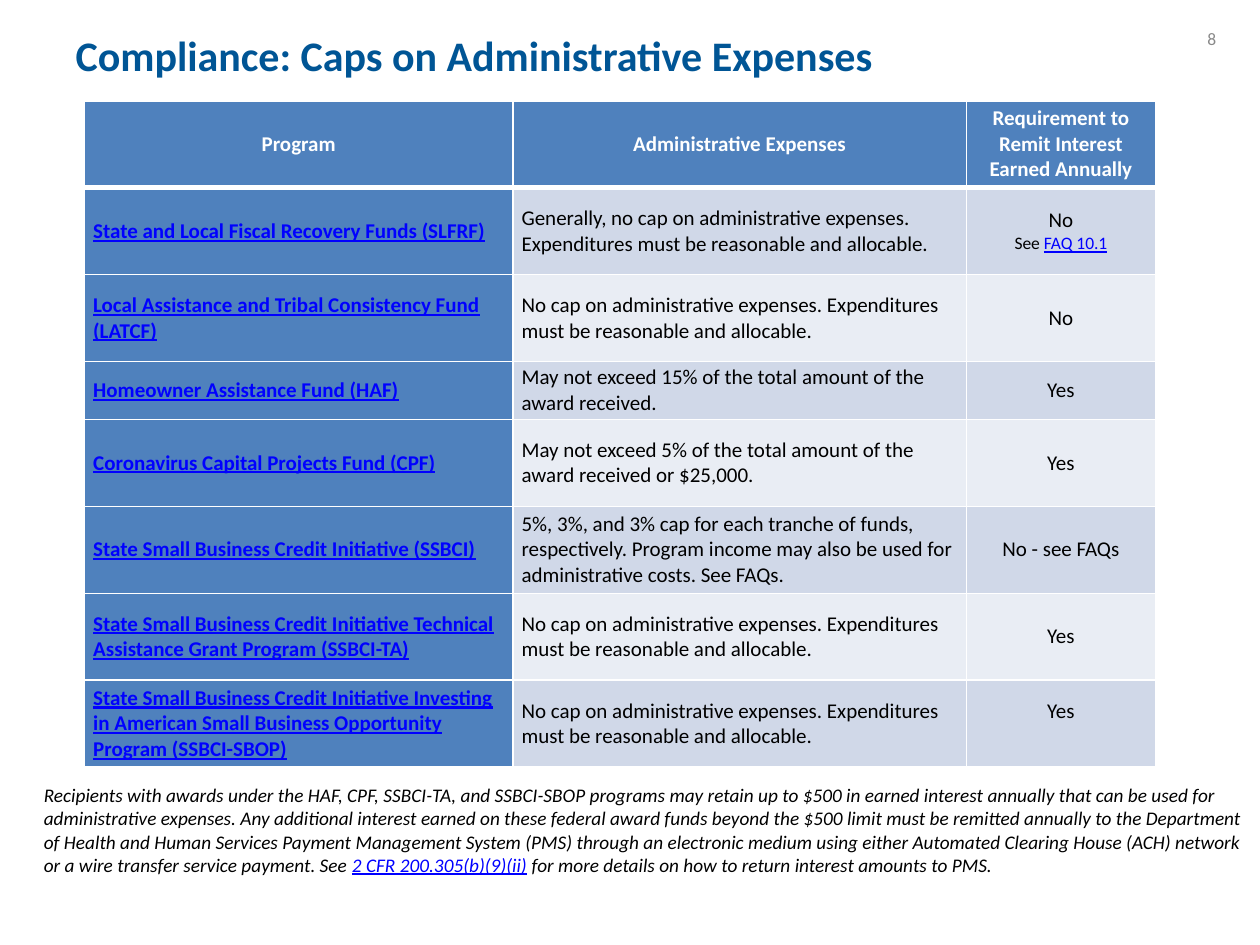
"""Build the slide on caps on administrative expenses."""
from typing import NamedTuple

from lxml import etree
from pptx import Presentation
from pptx import util as u
from pptx.dml.color import RGBColor
from pptx.enum import text
from pptx.oxml.ns import qn

W, H = 10, 7.5
BLUE, WHITE, BLACK, LINK = "4F81BD", "FFFFFF", "000000", "0000FF"
BANDS = ("D0D8E8", "E9EDF4")
COLS = (3.4, 3.6, 1.5)
ROW, SHORT_ROW = 0.69, 0.46
LEFT, CENTER, RIGHT = text.PP_ALIGN.LEFT, text.PP_ALIGN.CENTER, text.PP_ALIGN.RIGHT


class Program(NamedTuple):
    name: str
    expenses: str
    interest: str
    detail: str = ""
    height: float = ROW
    lift: float = 0


NO_CAP = "No cap on administrative expenses. Expenditures must be reasonable and allocable."
HEADS = ("Program", "Administrative Expenses", "Requirement to Remit Interest Earned Annually")
PROGRAMS = (
    Program("State and Local Fiscal Recovery Funds (SLFRF)",
            "Generally, no cap on administrative expenses. "
            "Expenditures must be reasonable and allocable.", "No", "See |FAQ 10.1|"),
    Program("Local Assistance and Tribal Consistency Fund (LATCF)", NO_CAP, "No"),
    Program("Homeowner Assistance Fund (HAF)",
            "May not exceed 15% of the total amount of the award received.",
            "Yes", height=SHORT_ROW),
    Program("Coronavirus Capital Projects Fund (CPF)",
            "May not exceed 5% of the total amount of the award received or $25,000.", "Yes"),
    Program("State Small Business Credit Initiative (SSBCI)",
            "5%, 3%, and 3% cap for each tranche of funds, respectively. Program income may "
            "also be used for administrative costs. See FAQs.", "No - see FAQs"),
    Program("State Small Business Credit Initiative Technical Assistance Grant Program "
            "(SSBCI-TA)", NO_CAP, "Yes"),
    Program("State Small Business Credit Initiative Investing in American Small Business "
            "Opportunity Program (SSBCI-SBOP)", NO_CAP, "Yes", lift=0.2),
)
NOTE = (
    "Recipients with awards under the HAF, CPF, SSBCI-TA, and SSBCI-SBOP programs may retain "
    "up to $500 in earned interest annually that can be used for administrative expenses. Any "
    "additional interest earned on these federal award funds beyond the $500 limit must be "
    "remitted annually to the Department of Health and Human Services Payment Management "
    "System (PMS) through an electronic medium using either Automated Clearing House (ACH) "
    "network or a wire transfer service payment. See |2 CFR 200.305(b)(9)(ii)| for more "
    "details on how to return interest amounts to PMS."
)


def rgb(color: str) -> RGBColor:
    """Turn a hex string into a colour."""
    return RGBColor.from_string(color)


def write(p, content: str, *, size: float = 12, color: str = BLACK, bold: bool = False,
          italic: bool = False, align=LEFT) -> None:
    """Fill a paragraph, styling the parts between bars as links."""
    p.alignment = align
    for i, part in enumerate(content.split("|")):
        if part:
            r = p.add_run()
            r.text = part
            f = r.font
            f.name, f.size, f.bold, f.italic = "Calibri", u.Pt(size), bold, italic
            f.underline = bool(i % 2)
            f.color.rgb = rgb(LINK if i % 2 else color)


def add_text(s, left: float, top: float, width: float, height: float, content: str, **fmt):
    """Add a wrapping text box and return its paragraph."""
    tf = s.shapes.add_textbox(*map(u.Inches, (left, top, width, height))).text_frame
    tf.word_wrap = True
    write(tf.paragraphs[0], content, **fmt)
    return tf.paragraphs[0]


def style_cell(cell, fill: str, top: float = 1, bottom: float = 1, lift: float = 0) -> None:
    """Set a cell's margins, white borders and fill."""
    cell.vertical_anchor = text.MSO_ANCHOR.MIDDLE
    cell.margin_left = cell.margin_right = u.Inches(0.07)
    cell.margin_top, cell.margin_bottom = 0, u.Inches(lift)
    pr = cell._tc.get_or_add_tcPr()
    for side, width in zip("LRTB", (1, 1, top, bottom)):
        ln = etree.SubElement(pr, qn(f"a:ln{side}"), w=str(u.Pt(width)))
        solid = etree.SubElement(ln, qn("a:solidFill"))
        etree.SubElement(solid, qn("a:srgbClr"), val=WHITE)
    cell.fill.solid()
    cell.fill.fore_color.rgb = rgb(fill)


def add_programs(s, left: float, top: float) -> None:
    """Add the table of programs under its header row."""
    heights = [ROW] + [item.height for item in PROGRAMS]
    size = map(u.Inches, (left, top, sum(COLS), sum(heights)))
    table = s.shapes.add_table(len(heights), len(COLS), *size).table
    table.horz_banding = False
    for col, width in zip(table.columns, COLS):
        col.width = u.Inches(width)
    for row, height in zip(table.rows, heights):
        row.height = u.Inches(height)
    for cell, head in zip(table.rows[0].cells, HEADS):
        style_cell(cell, BLUE, bottom=3)
        write(cell.text_frame.paragraphs[0], head, color=WHITE, bold=True, align=CENTER)
    for i, item in enumerate(PROGRAMS):
        cells = list(table.rows[i + 1].cells)
        band = BANDS[i % 2]
        for cell, fill, lift in zip(cells, (BLUE, band, band), (0, 0, item.lift)):
            style_cell(cell, fill, top=1 if i else 3, lift=lift)
        name, expenses, interest = (cell.text_frame for cell in cells)
        write(name.paragraphs[0], f"|{item.name}|", bold=True)
        write(expenses.paragraphs[0], item.expenses)
        write(interest.paragraphs[0], item.interest, align=CENTER)
        if item.detail:
            write(interest.add_paragraph(), item.detail, size=10, align=CENTER)


def main() -> None:
    """Build and save the slide."""
    prs = Presentation()
    prs.slide_width, prs.slide_height = u.Inches(W), u.Inches(H)
    s = prs.slides.add_slide(prs.slide_layouts[5])
    sp = s.shapes.title
    sp.left, sp.top, sp.width, sp.height = map(u.Inches, (0.05 * W, 0, 0.9 * W, 0.87))
    sp.text_frame.vertical_anchor = text.MSO_ANCHOR.MIDDLE
    write(sp.text_frame.paragraphs[0], "Compliance: Caps on Administrative Expenses",
          size=24, color="005595", bold=True)
    add_text(s, 7.42, 0.17, 2.33, 0.4, "8", size=10, color="898989", align=RIGHT)
    add_programs(s, 0.67, 0.8)
    p = add_text(s, 0, 6.17, W, 0.84, NOTE, size=11, italic=True)
    p._p.get_or_add_pPr().set("marL", str(u.Inches(0.25)))
    prs.save("out.pptx")


if __name__ == "__main__":
    main()
